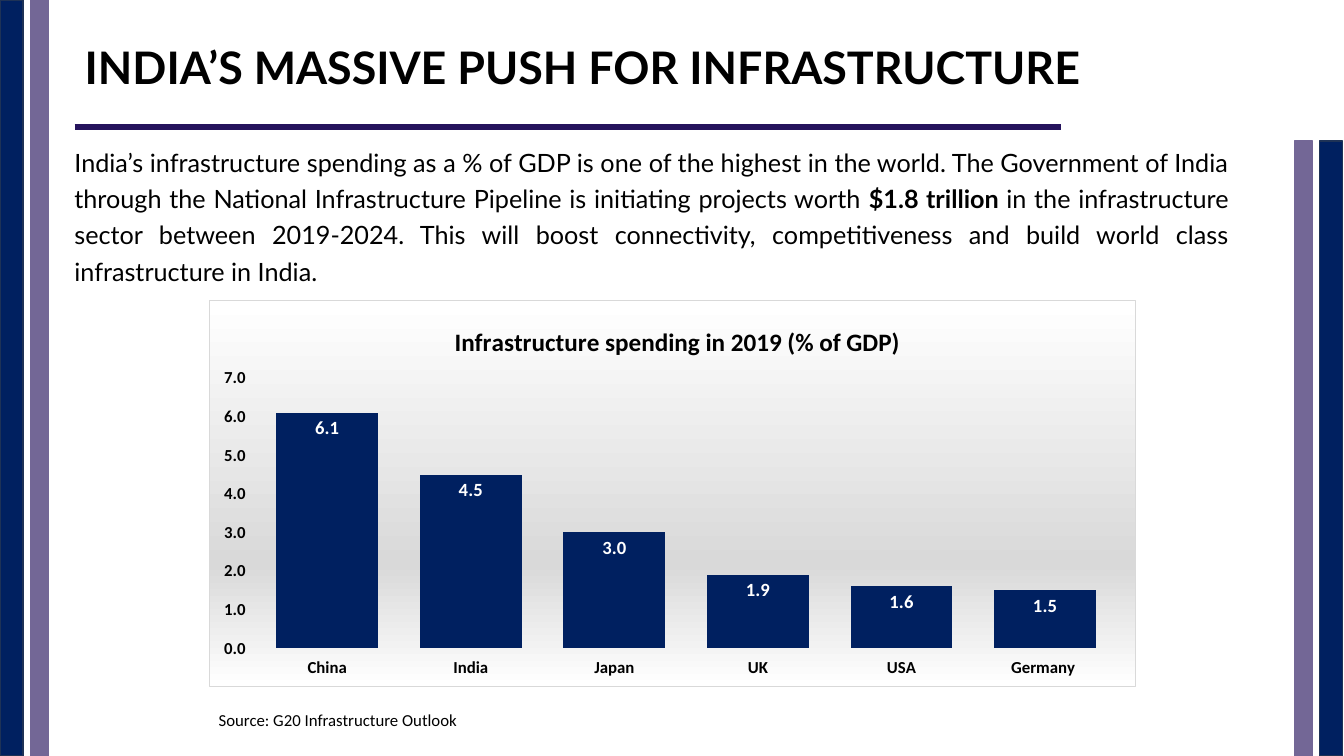
from dataclasses import dataclass

import lxml.etree
import pptx
import pptx.chart.data
import pptx.dml.color
import pptx.enum.chart
import pptx.enum.dml
import pptx.enum.shapes
import pptx.enum.text
import pptx.oxml
import pptx.oxml.ns
import pptx.util

COLUMNS, ROWS = 160, 90
COLOURS = {
    "navy": "002060", "navy edge": "1E3256", "mauve": "736796", "rule": "26145D",
    "black": "000000", "white": "FFFFFF", "grey": "D9D9D9",
}
SPENDING = {"China": 6.1, "India": 4.5, "Japan": 3.0, "UK": 1.9, "USA": 1.6, "Germany ": 1.5}
qn = pptx.oxml.ns.qn


@dataclass(frozen=True)
class Area:
    """A rectangle in grid columns and rows."""
    left: float
    top: float
    width: float
    height: float


@dataclass(frozen=True)
class Band:
    area: Area
    fill: str
    edge: str


@dataclass(frozen=True)
class Span:
    text: str
    bold: bool = False


BANDS = [
    Band(Area(0, 0, 2.76, 90), "navy", "navy edge"),
    Band(Area(3.6, 0, 2.16, 90), "mauve", "mauve"),
    Band(Area(157.1, 16.8, 2.76, 73.2), "navy", "navy edge"),
    Band(Area(154.1, 16.8, 2.16, 73.2), "mauve", "mauve"),
]
TITLE_AREA = Area(8.88, 2.28, 127.8, 11.4)
BODY_AREA = Area(7.68, 16.2, 139.8, 18.24)
CHART_AREA = Area(24.84, 35.76, 110.4, 46.08)
SOURCE_AREA = Area(24.84, 83.88, 51.72, 3.6)
BODY = [
    Span("India’s infrastructure spending as a % of GDP is one of the highest in the world. "
         "The Government of India through the National Infrastructure Pipeline is initiating "
         "projects worth "),
    Span("$1.8 trillion ", True),
    Span("in the infrastructure sector between 2019-2024. This will boost connectivity, "
         "competitiveness and build world class infrastructure in India. "),
]

deck = pptx.Presentation()
deck.slide_width = pptx.util.Inches(13.333)
deck.slide_height = pptx.util.Inches(7.5)


def across(columns: float) -> int:
    return round(deck.slide_width * columns / COLUMNS)


def down(rows: float) -> int:
    return round(deck.slide_height * rows / ROWS)


def place(area: Area) -> tuple[int, int, int, int]:
    return across(area.left), down(area.top), across(area.width), down(area.height)


def colour(name: str) -> pptx.dml.color.RGBColor:
    return pptx.dml.color.RGBColor.from_string(COLOURS[name])


def style(font, size: float, face: str, bold: bool = False, ink: str = "black") -> None:
    font.size, font.name, font.bold = pptx.util.Pt(size), face, bold
    font.color.rgb = colour(ink)


def add_band(page, band: Band) -> None:
    shape = page.shapes.add_shape(pptx.enum.shapes.MSO_SHAPE.RECTANGLE, *place(band.area))
    shape.shadow.inherit = False
    shape.fill.solid()
    shape.fill.fore_color.rgb = colour(band.fill)
    shape.line.color.rgb = colour(band.edge)
    shape.line.width = pptx.util.Pt(1)


def set_title(page) -> None:
    title = page.shapes.title
    title.left, title.top, title.width, title.height = place(TITLE_AREA)
    frame = title.text_frame
    frame.text = "INDIA’S MASSIVE PUSH FOR INFRASTRUCTURE"
    frame.auto_size = pptx.enum.text.MSO_AUTO_SIZE.NONE
    frame.vertical_anchor = pptx.enum.text.MSO_ANCHOR.MIDDLE
    frame.margin_left = across(1.2)
    frame.margin_top = frame.margin_right = frame.margin_bottom = 0
    frame.paragraphs[0].alignment = pptx.enum.text.PP_ALIGN.LEFT
    style(frame.paragraphs[0].runs[0].font, 32, "Lato", True)


def add_rule(page) -> None:
    rule = page.shapes.add_connector(
        pptx.enum.shapes.MSO_CONNECTOR.STRAIGHT,
        across(8.88), down(15.12), across(126.36), down(15.12))
    rule.line.color.rgb = colour("rule")
    rule.line.width = pptx.util.Pt(4.5)
    lxml.etree.SubElement(rule.element.spPr, qn("a:effectLst"))


def add_text(page, area: Area, spans: list[Span], size: float, face: str):
    """Add a one-paragraph text box and return its paragraph."""
    frame = page.shapes.add_textbox(*place(area)).text_frame
    frame.word_wrap = True
    para = frame.paragraphs[0]
    for span in spans:
        run = para.add_run()
        run.text = span.text
        style(run.font, size, face, span.bold)
    return para


def manual_layout(**shares: float):
    """Build a chart layout from shares of the chart's size."""
    layout = lxml.etree.Element(qn("c:layout"))
    manual = lxml.etree.SubElement(layout, qn("c:manualLayout"))
    if "w" in shares:
        lxml.etree.SubElement(manual, qn("c:layoutTarget"), val="inner")
    for side in ("x", "y"):
        lxml.etree.SubElement(manual, qn(f"c:{side}Mode"), val="edge")
    for side, share in shares.items():
        lxml.etree.SubElement(manual, qn(f"c:{side}"), val=str(share))
    return layout


def set_layout(parent, layout, before: str) -> None:
    for old in parent.findall(qn("c:layout")):
        parent.remove(old)
    parent.find(qn(before)).addprevious(layout)


def add_chart_background(chart) -> None:
    stops = "".join(
        f'<a:gs pos="{share * 1000}"><a:srgbClr val="{COLOURS[name]}"/></a:gs>'
        for share, name in [(0, "white"), (68, "grey"), (100, "white")])
    background = pptx.oxml.parse_xml(
        f'<c:spPr {pptx.oxml.ns.nsdecls("c", "a")}>'
        f'<a:gradFill><a:gsLst>{stops}</a:gsLst><a:lin ang="5400000" scaled="0"/></a:gradFill>'
        f'<a:ln w="9525"><a:solidFill><a:srgbClr val="{COLOURS["grey"]}"/></a:solidFill></a:ln>'
        '</c:spPr>')
    chart.element.find(qn("c:chart")).addnext(background)


def add_spending_chart(page) -> None:
    data = pptx.chart.data.CategoryChartData(number_format="0.0")
    data.categories = list(SPENDING)
    data.add_series("Series 1", list(SPENDING.values()))
    chart = page.shapes.add_chart(
        pptx.enum.chart.XL_CHART_TYPE.COLUMN_CLUSTERED, *place(CHART_AREA), data).chart
    style(chart.font, 10, "Calibri")
    chart.has_legend = False
    heading = chart.chart_title.text_frame
    heading.text = "Infrastructure spending in 2019 (% of GDP)"
    style(heading.paragraphs[0].runs[0].font, 18, "Calibri", True)
    chart.chart_title.include_in_layout = False
    set_layout(chart.chart_title._element, manual_layout(x=0.26, y=0.05), "c:overlay")

    for axis in (chart.category_axis, chart.value_axis):
        style(axis.tick_labels.font, 12, "Calibri", True)
        axis.has_major_gridlines = False
        axis.major_tick_mark = pptx.enum.chart.XL_TICK_MARK.OUTSIDE
        axis.format.line.fill.background()
    scale = chart.value_axis
    scale.minimum_scale, scale.maximum_scale, scale.major_unit = 0, 7, 1
    scale.tick_labels.number_format = "0.0"
    scale.tick_labels.number_format_is_linked = False

    plot = chart.plots[0]
    plot.gap_width = 41
    plot.vary_by_categories = False
    bars = plot.series[0]
    bars.format.fill.solid()
    bars.format.fill.fore_color.rgb = colour("navy")
    labels = bars.data_labels
    labels.show_value = True
    labels.position = pptx.enum.chart.XL_LABEL_POSITION.INSIDE_END
    labels.number_format, labels.number_format_is_linked = "0.0", False
    style(labels.font, 13.3, "Calibri", True, "white")

    plot_area = chart.element.find(qn("c:chart")).find(qn("c:plotArea"))
    set_layout(plot_area, manual_layout(x=0.05, y=0.2, w=0.93, h=0.7), "c:barChart")
    add_chart_background(chart)


def main() -> None:
    page = deck.slides.add_slide(deck.slide_layouts[5])
    for band in BANDS:
        add_band(page, band)
    set_title(page)
    add_rule(page)
    body = add_text(page, BODY_AREA, BODY, 18, "Lato")
    body.alignment = pptx.enum.text.PP_ALIGN.JUSTIFY
    body.line_spacing, body.space_after = 1.2, pptx.util.Pt(6)
    add_spending_chart(page)
    add_text(page, SOURCE_AREA, [Span("Source: G20 Infrastructure Outlook")], 12, "Calibri")
    deck.save("out.pptx")


if __name__ == "__main__":
    main()
